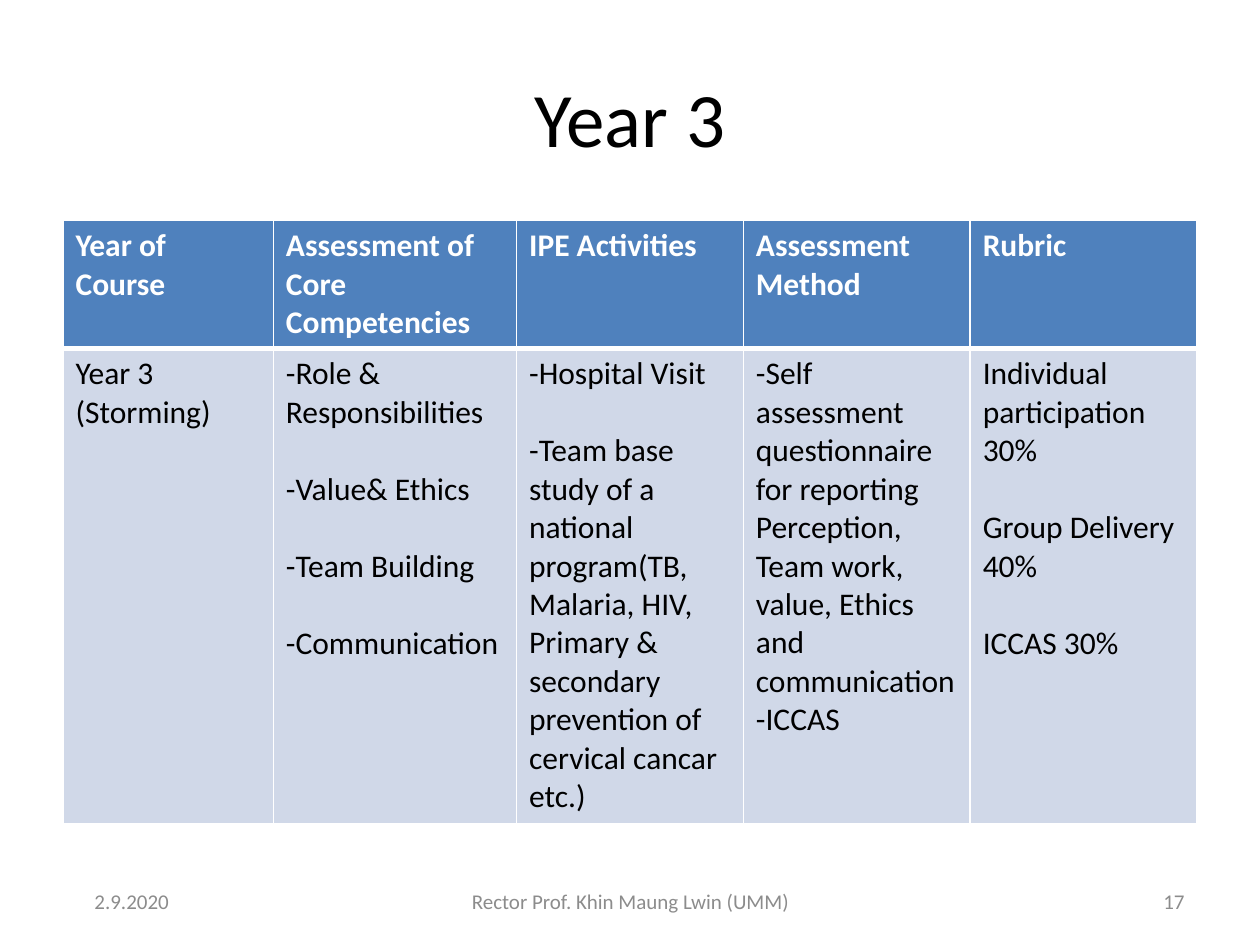
from lxml import etree
from pptx import Presentation
from pptx.dml.color import RGBColor
from pptx.enum.text import MSO_ANCHOR, PP_ALIGN
from pptx.oxml.ns import qn
from pptx.util import Inches, Pt

LEFT, CENTER, RIGHT = PP_ALIGN.LEFT, PP_ALIGN.CENTER, PP_ALIGN.RIGHT
MIDDLE = MSO_ANCHOR.MIDDLE

BLACK = RGBColor(0x00, 0x00, 0x00)
WHITE = RGBColor(0xFF, 0xFF, 0xFF)
GRAY = RGBColor(0x8C, 0x8C, 0x8C)
HEADER_BLUE = RGBColor(0x4F, 0x81, 0xBD)
BODY_BLUE = RGBColor(0xD0, 0xD8, 0xE8)

FONT = "Calibri"
MARGIN = 0.5
CONTENT_W = 9
COL_WIDTHS = [1.67, 1.93, 1.8, 1.8, 1.8]
ROW_HEIGHTS = [1.0, 3.77]
GAP = Pt(22)  # one line of 18 pt text

HEADERS = ["Year of Course", "Assessment of Core Competencies",
           "IPE Activities", "Assessment Method", "Rubric"]
# Each cell is a list of groups; each group is a list of paragraphs.
BODY = [
    [["Year 3", "(Storming)"]],
    [["-Role & Responsibilities"], ["-Value& Ethics"], ["-Team Building"],
     ["-Communication"]],
    [["-Hospital Visit"],
     ["-Team base study of a national program(TB, Malaria, HIV, Primary & "
      "secondary prevention of cervical cancar etc.)"]],
    [["-Self assessment questionnaire for reporting", "Perception,",
      "Team work, value, Ethics and communication", "-ICCAS"]],
    [["Individual participation 30%"], ["Group Delivery 40%"], ["ICCAS 30%"]],
]


def style(p, size, color, align=LEFT, bold=False):
    p.alignment = align
    p.font.name = FONT
    p.font.size = Pt(size)
    p.font.color.rgb = color
    p.font.bold = bold


def set_borders(cell, top, bottom):
    """Draw white cell borders; top and bottom widths are in points."""
    tc_pr = cell._tc.get_or_add_tcPr()
    edges = [("a:lnL", 1), ("a:lnR", 1), ("a:lnT", top), ("a:lnB", bottom)]
    for i, (tag, width) in enumerate(edges):
        ln = etree.Element(qn(tag), w=str(Pt(width)))
        fill = etree.SubElement(ln, qn("a:solidFill"))
        etree.SubElement(fill, qn("a:srgbClr"), val=str(WHITE))
        tc_pr.insert(i, ln)


def fill_cell(cell, groups, fill, color, bold=False):
    cell.fill.solid()
    cell.fill.fore_color.rgb = fill
    tf = cell.text_frame
    tf.text = "\n".join(line for group in groups for line in group)
    paragraphs = iter(tf.paragraphs)
    for g, group in enumerate(groups):
        for i in range(len(group)):
            p = next(paragraphs)
            style(p, 18, color, bold=bold)
            if g and i == 0:
                p.space_before = GAP


def add_title(s, text):
    sp = s.shapes.title
    sp.left, sp.top = Inches(MARGIN), Inches(0.3)
    sp.width, sp.height = Inches(CONTENT_W), Inches(1.25)
    tf = sp.text_frame
    tf.text = text
    tf.vertical_anchor = MIDDLE
    style(tf.paragraphs[0], 44, BLACK, CENTER)


def add_assessment_table(s):
    table = s.shapes.add_table(
        len(ROW_HEIGHTS), len(COL_WIDTHS), Inches(MARGIN), Inches(1.75),
        Inches(CONTENT_W), Inches(sum(ROW_HEIGHTS))).table
    for row, height in zip(table.rows, ROW_HEIGHTS):
        row.height = Inches(height)
    for c, width in enumerate(COL_WIDTHS):
        table.columns[c].width = Inches(width)
        header, body = table.cell(0, c), table.cell(1, c)
        fill_cell(header, [[HEADERS[c]]], HEADER_BLUE, WHITE, bold=True)
        fill_cell(body, BODY[c], BODY_BLUE, BLACK)
        set_borders(header, 1, 3)
        set_borders(body, 3, 1)


def add_footer(s, text, left, width, align, inset=0.1):
    tf = s.shapes.add_textbox(Inches(left), Inches(6.95),
                              Inches(width), Inches(0.4)).text_frame
    tf.word_wrap = True
    tf.vertical_anchor = MIDDLE
    tf.margin_left = Inches(inset)
    tf.text = text
    style(tf.paragraphs[0], 12, GRAY, align)


def main():
    prs = Presentation()
    prs.slide_width, prs.slide_height = Inches(10), Inches(7.5)
    s = prs.slides.add_slide(prs.slide_layouts[5])
    add_title(s, "Year 3")
    add_assessment_table(s)
    add_footer(s, "2.9.2020", MARGIN, 2.33, LEFT, inset=0.25)
    add_footer(s, "Rector Prof. Khin Maung Lwin (UMM)", 3.42, 3.17, CENTER)
    add_footer(s, "17", 7.17, 2.33, RIGHT)
    prs.save("out.pptx")


if __name__ == "__main__":
    main()
